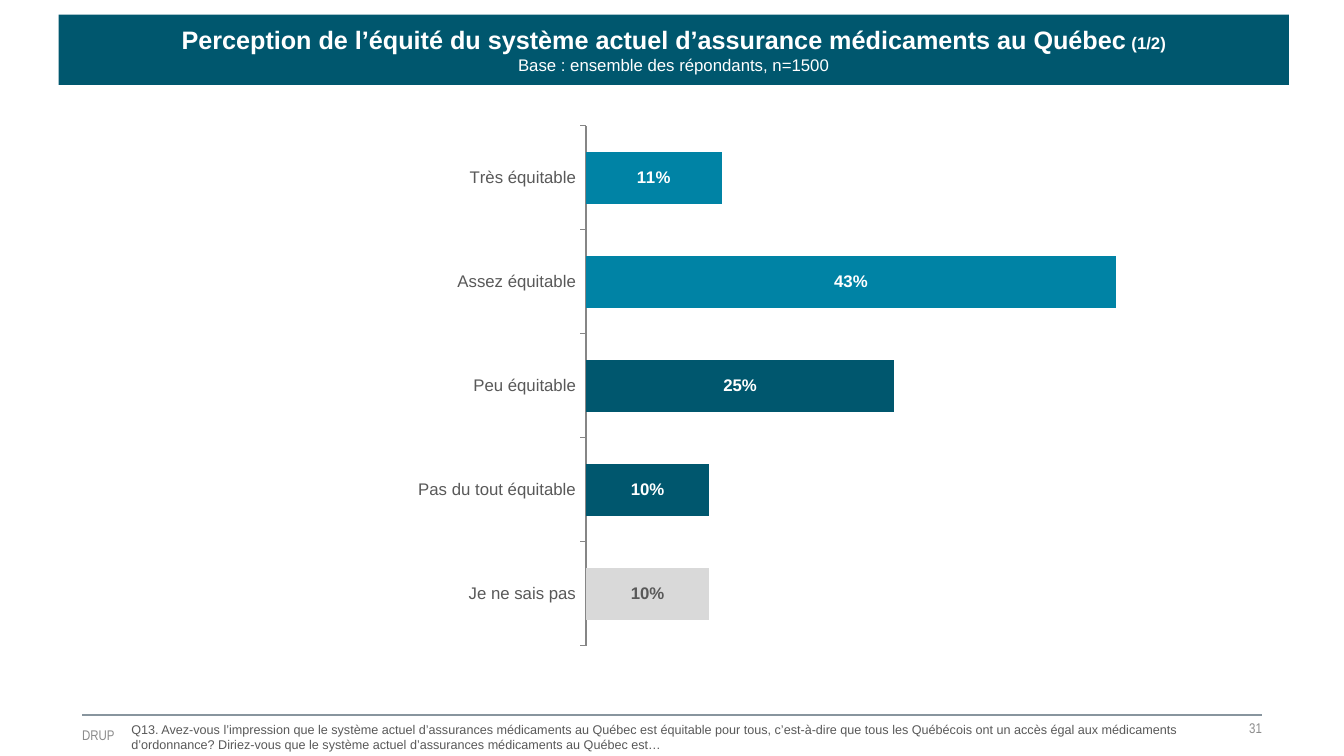
import pptx
import pptx.chart.data
import pptx.dml.color
import pptx.enum.chart
import pptx.enum.shapes
import pptx.enum.text
import pptx.oxml
import pptx.util
from pptx.oxml import ns

Cm = pptx.util.Cm
Pt = pptx.util.Pt
RGBColor = pptx.dml.color.RGBColor
PP_ALIGN = pptx.enum.text.PP_ALIGN
ANCHOR = pptx.enum.text.MSO_ANCHOR

DARK_TEAL = RGBColor(0x00, 0x57, 0x6E)
TEAL = RGBColor(0x00, 0x83, 0xA5)
LIGHT_GREY = RGBColor(0xD9, 0xD9, 0xD9)
TEXT_GREY = RGBColor(0x59, 0x59, 0x59)
FOOTER_GREY = RGBColor(0x8C, 0x8C, 0x8C)
RULE_GREY = RGBColor(0x88, 0x95, 0x9E)
AXIS_GREY = RGBColor(0x86, 0x86, 0x86)
WHITE = RGBColor(0xFF, 0xFF, 0xFF)


def format_font(font, size, color, bold=False, name="Arial"):
    font.size = Pt(size)
    font.name = name
    font.bold = bold
    font.color.rgb = color


def add_text(p, text, align=PP_ALIGN.LEFT, **font_format):
    p.alignment = align
    r = p.add_run()
    r.text = text
    format_font(r.font, **font_format)


prs = pptx.Presentation()
prs.slide_width = Cm(33.87)
prs.slide_height = Cm(19.05)
slide = prs.slides.add_slide(prs.slide_layouts[5])
shapes = slide.shapes

# Title band
title = shapes.title
title.left, title.top, title.width, title.height = Cm(1.48), Cm(0.37), Cm(31), Cm(1.77)
title.fill.solid()
title.fill.fore_color.rgb = DARK_TEAL
tf = title.text_frame
tf.auto_size = pptx.enum.text.MSO_AUTO_SIZE.NONE
tf.word_wrap = True
tf.vertical_anchor = ANCHOR.MIDDLE
tf.margin_left = tf.margin_right = tf.margin_top = tf.margin_bottom = 0
p = tf.paragraphs[0]
add_text(p, "Perception de l’équité du système actuel d’assurance médicaments au Québec",
         PP_ALIGN.CENTER, size=18, color=WHITE, bold=True)
add_text(p, " (1/2)", PP_ALIGN.CENTER, size=12, color=WHITE, bold=True)
add_text(tf.add_paragraph(), "Base : ensemble des répondants, n=1500",
         PP_ALIGN.CENTER, size=12, color=WHITE)

# Bar chart
answers = [
    ("Très équitable", 0.11, TEAL),
    ("Assez équitable", 0.43, TEAL),
    ("Peu équitable", 0.25, DARK_TEAL),
    ("Pas du tout équitable", 0.10, DARK_TEAL),
    ("Je ne sais pas", 0.10, LIGHT_GREY),
]
data = pptx.chart.data.CategoryChartData(number_format="0%")
data.categories = [label for label, share, color in answers]
data.add_series("Series 1", [share for label, share, color in answers])
chart = shapes.add_chart(
    pptx.enum.chart.XL_CHART_TYPE.BAR_CLUSTERED,
    Cm(4.93), Cm(2.77), Cm(28.19), Cm(14.43), data).chart
chart.has_legend = False
chart.has_title = False
chart.font.name = "Calibri"
chart.font.size = Pt(18)

category_axis = chart.category_axis
category_axis.reverse_order = True
category_axis.has_major_gridlines = False
category_axis.major_tick_mark = pptx.enum.chart.XL_TICK_MARK.OUTSIDE
category_axis.format.line.color.rgb = AXIS_GREY
format_font(category_axis.tick_labels.font, size=12, color=TEXT_GREY)
value_axis = chart.value_axis
value_axis.minimum_scale = 0
value_axis.maximum_scale = 0.5
value_axis.has_major_gridlines = False
value_axis.visible = False

plot = chart.plots[0]
plot.gap_width = 100
plot.vary_by_categories = False
plot.has_data_labels = True
labels = plot.data_labels
labels.show_value = True
labels.number_format = "0%"
labels.number_format_is_linked = False
labels.position = pptx.enum.chart.XL_LABEL_POSITION.CENTER
format_font(labels.font, size=12, color=WHITE, bold=True)

series = plot.series[0]
series.format.fill.solid()
series.format.fill.fore_color.rgb = DARK_TEAL
for i, (label, share, color) in enumerate(answers):
    if color != DARK_TEAL:
        fill = series.points[i].format.fill
        fill.solid()
        fill.fore_color.rgb = color
    # Every label belongs to its point, so that the pale bar can have dark text
    point_label = series.points[i].data_label
    format_font(point_label.font, size=12, bold=True,
                color=TEXT_GREY if color == LIGHT_GREY else WHITE)
    point_label.position = pptx.enum.chart.XL_LABEL_POSITION.CENTER

# Fixed inner plot area, as fractions of the chart
plot_area = chart.element.find(".//" + ns.qn("c:plotArea"))
for old_layout in plot_area.findall(ns.qn("c:layout")):
    plot_area.remove(old_layout)
settings = [("layoutTarget", "inner"), ("xMode", "edge"), ("yMode", "edge"),
            ("x", 0.349), ("y", 0.028), ("w", 0.551), ("h", 0.908)]
plot_area.insert(0, pptx.oxml.parse_xml(
    f"<c:layout {ns.nsdecls('c')}><c:manualLayout>"
    + "".join(f'<c:{tag} val="{val}"/>' for tag, val in settings)
    + "</c:manualLayout></c:layout>"))

# Footer
rule = shapes.add_connector(
    pptx.enum.shapes.MSO_CONNECTOR.STRAIGHT, Cm(2.07), Cm(18.01), Cm(31.8), Cm(18.01))
rule.line.color.rgb = RULE_GREY
rule.line.width = Pt(1.5)
rule.element.spPr.append(pptx.oxml.parse_xml(f"<a:effectLst {ns.nsdecls('a')}/>"))

question = (
    "Q13. Avez-vous l’impression que le système actuel d’assurances médicaments au Québec "
    "est équitable pour tous, c’est-à-dire que tous les Québécois ont un accès égal aux "
    "médicaments d’ordonnance? Diriez-vous que le système actuel d’assurances médicaments "
    "au Québec est…")
small_print = dict(size=10, color=FOOTER_GREY, name="Arial Narrow")
footer = [
    ("31", 22.17, 18.01, 9.63, 0.66, 0, 0, ANCHOR.MIDDLE,
     dict(small_print, align=PP_ALIGN.RIGHT)),
    ("DRUP", 2.07, 18.19, 9.47, 0.66, 0, 0, ANCHOR.MIDDLE, small_print),
    (question, 3.06, 18.06, 28.7, 1.02, 0.25, 0.13, ANCHOR.TOP,
     dict(size=9, color=TEXT_GREY)),
]
for text, left, top, width, height, side, edge, anchor, text_format in footer:
    tf = shapes.add_textbox(Cm(left), Cm(top), Cm(width), Cm(height)).text_frame
    tf.word_wrap = True
    tf.vertical_anchor = anchor
    tf.margin_left = tf.margin_right = Cm(side)
    tf.margin_top = tf.margin_bottom = Cm(edge)
    add_text(tf.paragraphs[0], text, **text_format)

prs.save("out.pptx")
